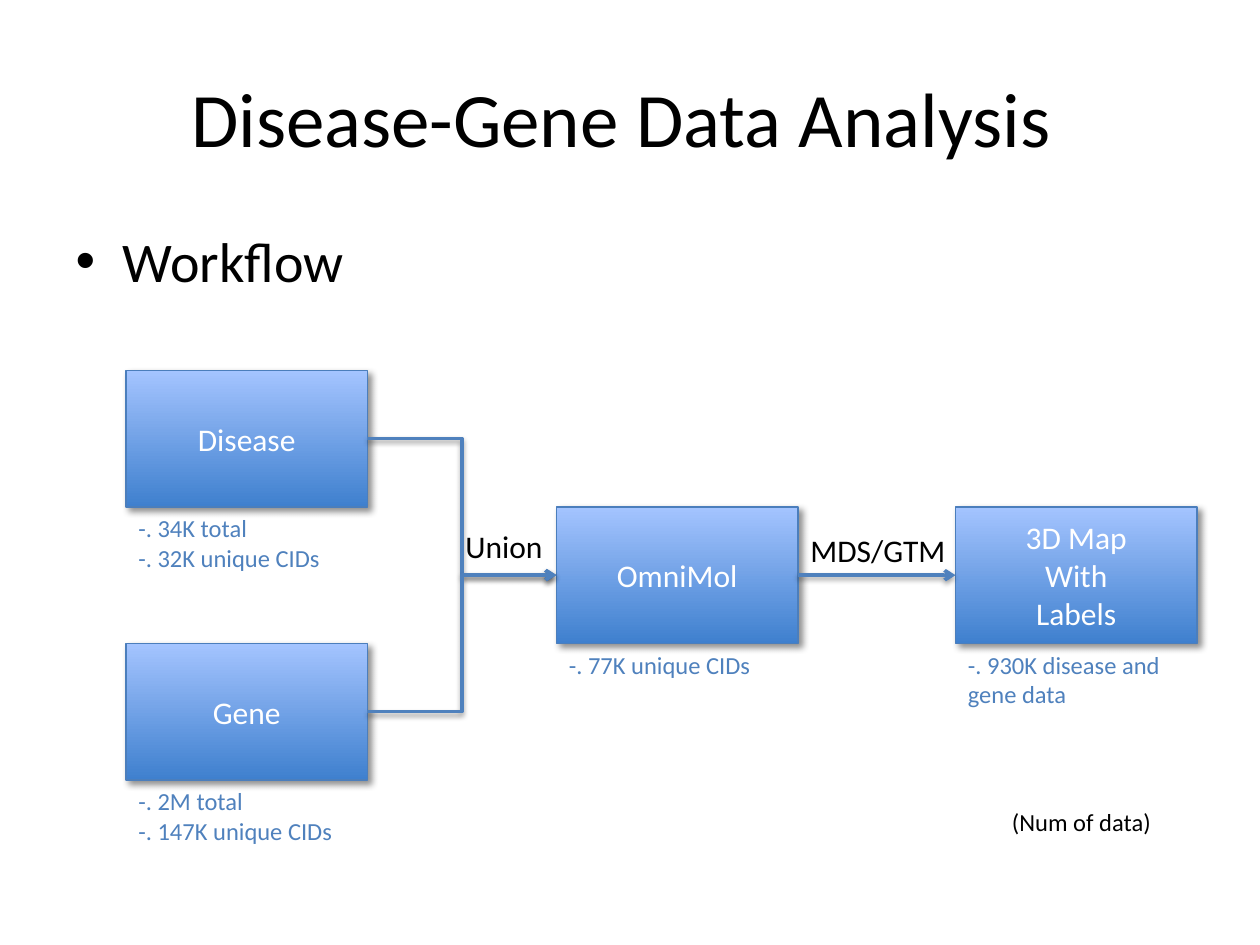
from dataclasses import dataclass

from lxml import etree
from pptx import Presentation
from pptx import util as u
from pptx.dml.color import RGBColor
from pptx.enum import shapes, text
from pptx.oxml import ns

FONT = "Calibri"
BLACK = RGBColor(0x00, 0x00, 0x00)
WHITE = RGBColor(0xFF, 0xFF, 0xFF)
BLUE = RGBColor(0x4F, 0x81, 0xBD)
BORDER = RGBColor(0x4B, 0x7E, 0xBC)
DARK_BLUE = RGBColor(0x3F, 0x80, 0xCE)
LIGHT_BLUE = RGBColor(0xA4, 0xC4, 0xFF)

SLIDE_WIDTH, SLIDE_HEIGHT = u.Inches(10), u.Inches(7.5)
COLUMN = SLIDE_WIDTH / 120
ROW = COLUMN * 13
GRID_TOP = u.Inches(2.94)
BOX_COLUMNS = 23
LEFT_SITE, RIGHT_SITE = 1, 3


@dataclass(frozen=True)
class Step:
    """A workflow box, with the note that stands one row below it."""
    column: float
    row: float
    lines: tuple[str, ...]
    note: str


@dataclass(frozen=True)
class Label:
    column: float
    row: float
    columns: float
    text: str
    size: float
    align: text.PP_ALIGN


@dataclass(frozen=True)
class Shadow:
    """Lengths in points, opacity in percent, angle in degrees."""
    opacity: float
    blur: float
    distance: float
    angle: float


BOX_SHADOW = Shadow(opacity=43, blur=4, distance=3, angle=45)
ARROW_SHADOW = Shadow(opacity=38, blur=3.1, distance=1.6, angle=90)

STEPS = {
    "disease": Step(12, 0, ("Disease",), "-. 34K total \n-. 32K unique CIDs"),
    "gene": Step(12, 2, ("Gene",), "-. 2M total \n-. 147K unique CIDs"),
    "compounds": Step(53, 1, ("OmniMol",), "-. 77K unique CIDs"),
    "map": Step(91, 1, ("3D Map", "With", "Labels"),
                "-. 930K disease and gene data"),
}
ARROWS = [("disease", "compounds"), ("gene", "compounds"), ("compounds", "map")]
LABELS = [
    Label(76, 1.13, 18, "MDS/GTM", 18, text.PP_ALIGN.LEFT),
    Label(94, 3.15, 18, "(Num of data)", 14, text.PP_ALIGN.CENTER),
    Label(42, 1.1, 12, "Union", 18, text.PP_ALIGN.CENTER),
]


def write(frame, *lines: str, size: float, color: RGBColor = BLACK, align=None) -> None:
    """Write one paragraph per line; a newline inside a line is a soft break."""
    for index, line in enumerate(lines):
        para = frame.add_paragraph() if index else frame.paragraphs[0]
        para.text = line
        para.alignment = align
        for span in para.runs:
            span.font.name = FONT
            span.font.size = u.Pt(size)
            span.font.color.rgb = color


def add_shadow(shape, shadow: Shadow) -> None:
    properties = shape._element.spPr
    effects = etree.SubElement(properties, ns.qn("a:effectLst"))
    outer = etree.SubElement(
        effects, ns.qn("a:outerShdw"), blurRad=str(u.Pt(shadow.blur)),
        dist=str(u.Pt(shadow.distance)), dir=str(shadow.angle * 60000),
        rotWithShape="0")
    black = etree.SubElement(outer, ns.qn("a:srgbClr"), val=str(BLACK))
    etree.SubElement(black, ns.qn("a:alpha"), val=str(shadow.opacity * 1000))


def grid_area(column: float, row: float, columns: float, rows: float) -> tuple[int, ...]:
    """Left, top, width and height of an area of the grid."""
    return (round(column * COLUMN), round(GRID_TOP + row * ROW),
            round(columns * COLUMN), round(rows * ROW))


def add_box(page, step: Step):
    box = page.shapes.add_shape(
        shapes.MSO_SHAPE.RECTANGLE,
        *grid_area(step.column, step.row, BOX_COLUMNS, 1))
    box.fill.gradient()
    box.fill.gradient_angle = 90
    for stop, position, color in zip(box.fill.gradient_stops, (0, 1),
                                     (DARK_BLUE, LIGHT_BLUE)):
        stop.position = position
        stop.color.rgb = color
    box.line.color.rgb = BORDER
    box.line.width = u.Pt(0.75)
    add_shadow(box, BOX_SHADOW)
    box.text_frame.vertical_anchor = text.MSO_ANCHOR.MIDDLE
    write(box.text_frame, *step.lines, size=18, color=WHITE,
          align=text.PP_ALIGN.CENTER)
    return box


def add_arrow(page, source, target) -> None:
    arrow = page.shapes.add_connector(shapes.MSO_CONNECTOR.ELBOW, 0, 0, 0, 0)
    arrow.begin_connect(source, RIGHT_SITE)
    arrow.end_connect(target, LEFT_SITE)
    arrow.line.color.rgb = BLUE
    arrow.line.width = u.Pt(2)
    etree.SubElement(arrow.line._get_or_add_ln(), ns.qn("a:tailEnd"), type="arrow")
    add_shadow(arrow, ARROW_SHADOW)


def add_label(page, label: Label, color: RGBColor = BLACK) -> None:
    lines = label.text.count("\n") + 1
    height = (0.1 + lines * label.size / 60) * u.Inches(1) / ROW
    box = page.shapes.add_textbox(
        *grid_area(label.column, label.row, label.columns, height))
    box.text_frame.word_wrap = True
    box.text_frame.auto_size = text.MSO_AUTO_SIZE.SHAPE_TO_FIT_TEXT
    write(box.text_frame, label.text, size=label.size, color=color,
          align=label.align)


def main() -> None:
    deck = Presentation()
    deck.slide_width, deck.slide_height = SLIDE_WIDTH, SLIDE_HEIGHT
    page = deck.slides.add_slide(deck.slide_layouts[1])

    title, body = page.placeholders
    title.left, title.top = u.Inches(0.5), u.Inches(0.3)
    title.width, title.height = u.Inches(9), u.Inches(1.25)
    write(title.text_frame, "Disease-Gene Data Analysis ", size=44,
          align=text.PP_ALIGN.CENTER)
    body.left, body.top = u.Inches(0.5), u.Inches(1.75)
    body.width, body.height = u.Inches(9), u.Inches(4.95)
    write(body.text_frame, "Workflow", size=32)

    boxes = {name: add_box(page, step) for name, step in STEPS.items()}
    for source, target in ARROWS:
        add_arrow(page, boxes[source], boxes[target])
    for step in STEPS.values():
        note = Label(step.column, step.row + 1, BOX_COLUMNS, step.note, 14,
                     text.PP_ALIGN.LEFT)
        add_label(page, note, BLUE)
    for label in LABELS:
        add_label(page, label)

    deck.save("out.pptx")


if __name__ == "__main__":
    main()
